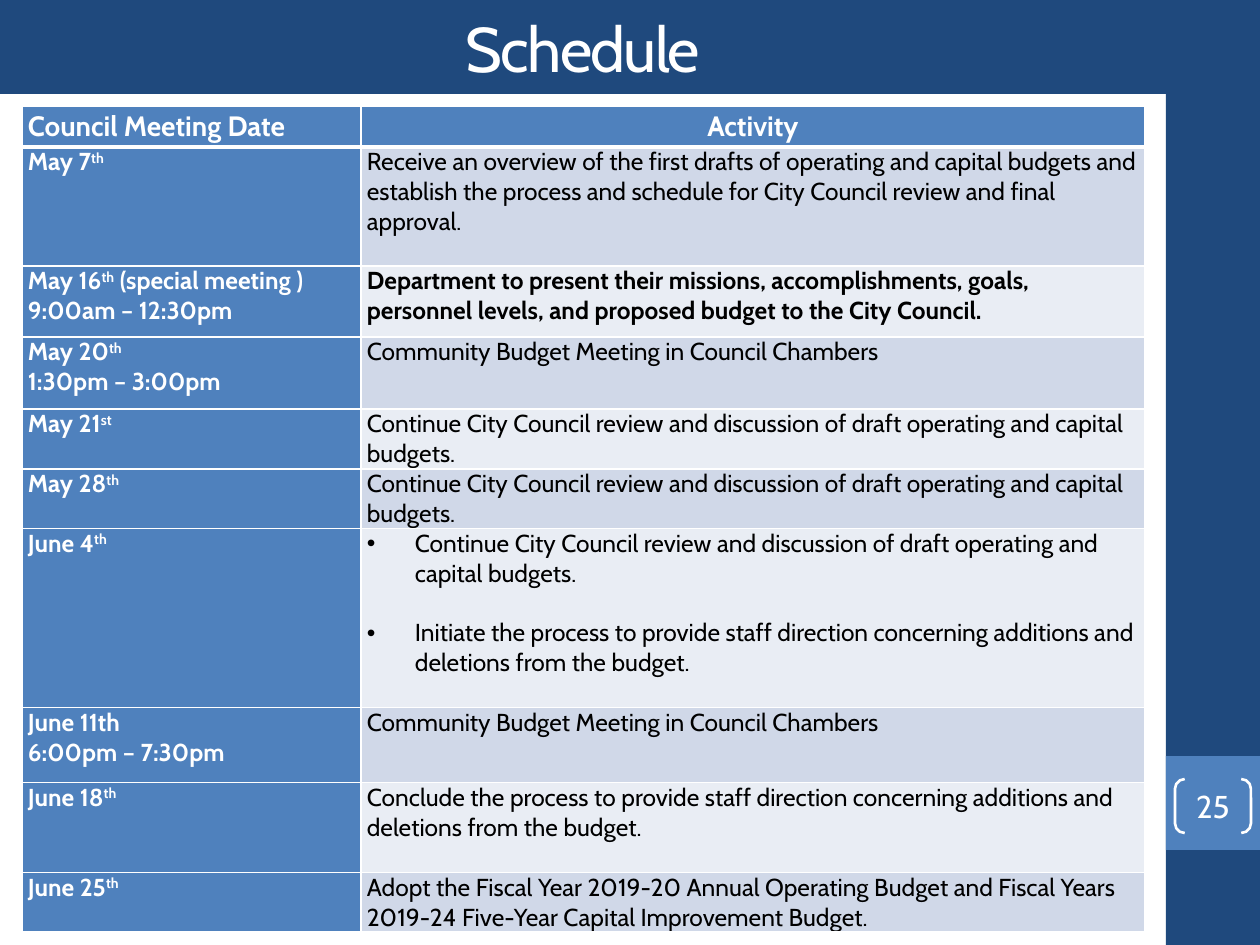
from dataclasses import dataclass

from lxml.etree import SubElement
from pptx import Presentation
from pptx.dml.color import RGBColor
from pptx.enum.shapes import MSO_SHAPE as Shape
from pptx.enum.text import MSO_ANCHOR as Anchor, PP_ALIGN as Align
from pptx.oxml.ns import qn
from pptx.util import Pt

EMU_PER_PX = 914400 / 126


def px(length):
    return round(length * EMU_PER_PX)


@dataclass(frozen=True)
class Theme:
    font: str = "Cabin"
    navy: str = "1F497D"
    blue: str = "4F81BD"
    bands: tuple = ("D0D8E8", "E9EDF4")
    white: str = "FFFFFF"
    black: str = "000000"
    title_size: int = 36
    number_size: int = 18
    header_size: int = 16
    body_size: int = 14


class SlideBuilder:
    def __init__(self, slide, theme):
        self.slide = slide
        self.theme = theme

    def style(self, paragraph, size, color, bold=False, align=Align.LEFT):
        paragraph.alignment = align
        font = paragraph.font
        font.name = self.theme.font
        font.size = Pt(size)
        font.bold = bold
        font.color.rgb = RGBColor.from_string(color)

    def fill(self, target, color):
        target.fill.solid()
        target.fill.fore_color.rgb = RGBColor.from_string(color)

    def title(self, text, *box):
        title = self.slide.shapes.title
        title.left, title.top, title.width, title.height = map(px, box)
        self.fill(title, self.theme.navy)
        title.text_frame.vertical_anchor = Anchor.MIDDLE
        heading = title.text_frame.paragraphs[0]
        run = heading.add_run()
        run.text = text
        run._r.get_or_add_rPr().set("spc", "-100")
        self.style(heading, self.theme.title_size, self.theme.white, align=Align.CENTER)

    def panel(self, color, *box):
        panel = self.slide.shapes.add_shape(Shape.RECTANGLE, *map(px, box))
        panel.shadow.inherit = False
        panel.line.fill.background()
        self.fill(panel, color)

    def page_number(self, number, *box):
        bracket = self.slide.shapes.add_shape(Shape.DOUBLE_BRACKET, *map(px, box))
        bracket.adjustments[0] = 0.18
        bracket.shadow.inherit = False
        bracket.fill.background()
        bracket.line.color.rgb = RGBColor.from_string(self.theme.white)
        bracket.line.width = Pt(1.5)
        frame = bracket.text_frame
        frame.margin_left = frame.margin_right = frame.margin_top = frame.margin_bottom = 0
        frame.vertical_anchor = Anchor.MIDDLE
        frame.text = str(number)
        self.style(frame.paragraphs[0], self.theme.number_size, self.theme.white,
                   align=Align.CENTER)

    def borders(self, cell, bottom=1):
        properties = cell._tc.get_or_add_tcPr()
        for side, width in (("L", 1), ("R", 1), ("T", 1), ("B", bottom)):
            line = SubElement(properties, qn(f"a:ln{side}"), w=str(Pt(width)))
            paint = SubElement(line, qn("a:solidFill"))
            SubElement(paint, qn("a:srgbClr"), val=self.theme.white)

    def bullet(self, paragraph):
        properties = paragraph._p.get_or_add_pPr()
        properties.set("marL", str(px(48)))
        properties.set("indent", str(-px(48)))
        paragraph.space_after = Pt(17)
        SubElement(properties, qn("a:buFont"), typeface="Arial")
        SubElement(properties, qn("a:buChar"), char="•")

    def cell(self, cell, lines, background, size, color, bold=False,
             align=Align.LEFT, anchor=Anchor.TOP, bottom=1):
        """Fill a cell; text between carets is superscript, several long lines are bullets."""
        cell.margin_left = cell.margin_right = px(6)
        cell.margin_top = cell.margin_bottom = 0
        cell.vertical_anchor = anchor
        self.borders(cell, bottom)
        self.fill(cell, background)
        frame = cell.text_frame
        for index, line in enumerate(lines):
            paragraph = frame.add_paragraph() if index else frame.paragraphs[0]
            if len(lines) > 1 and color == self.theme.black:
                self.bullet(paragraph)
            for part, text in enumerate(line.split("^")):
                if text:
                    run = paragraph.add_run()
                    run.text = text
                    if part % 2:
                        run._r.get_or_add_rPr().set("baseline", "30000")
            self.style(paragraph, size, color, bold, align)

    def schedule(self, left, top, widths, headings, header_height, meetings):
        theme = self.theme
        heights = [header_height] + [height for height, *_ in meetings]
        table = self.slide.shapes.add_table(
            len(heights), len(widths), px(left), px(top),
            px(sum(widths)), px(sum(heights))).table
        table.first_col = True
        for column, width in zip(table.columns, widths):
            column.width = px(width)
        for row, height in zip(table.rows, heights):
            row.height = px(height)
        for column, (heading, align) in enumerate(headings):
            self.cell(table.cell(0, column), [heading], theme.blue, theme.header_size,
                      theme.white, True, align, Anchor.MIDDLE, bottom=3)
        for index, (_, dates, activities, bold) in enumerate(meetings):
            row = index + 1
            self.cell(table.cell(row, 0), dates, theme.blue, theme.body_size,
                      theme.white, True)
            self.cell(table.cell(row, 1), activities, theme.bands[index % 2],
                      theme.body_size, theme.black, bold)


REVIEW = "Continue City Council review and discussion of draft operating and capital budgets."
DIRECTION = ("the process to provide staff direction concerning additions and "
             "deletions from the budget.")
COMMUNITY = "Community Budget Meeting in Council Chambers"

# Row height, date lines, activity lines, bold activity
MEETINGS = [
    (119, ["May 7^th"],
     ["Receive an overview of the first drafts of operating and capital budgets and "
      "establish the process and schedule for City Council review and final approval."], False),
    (71, ["May 16^th^ (special meeting )", "9:00am – 12:30pm"],
     ["Department to present their missions, accomplishments, goals, personnel levels, "
      "and proposed budget to the City Council."], True),
    (72, ["May 20^th", "1:30pm – 3:00pm"], [COMMUNITY], False),
    (60, ["May 21^st"], [REVIEW], False),
    (59, ["May 28^th"], [REVIEW], False),
    (179, ["June 4^th"], [REVIEW, f"Initiate {DIRECTION}"], False),
    (75, ["June 11th", "6:00pm – 7:30pm"], [COMMUNITY], False),
    (90, ["June 18^th"], [f"Conclude {DIRECTION}"], False),
    (59, ["June 25^th"],
     ["Adopt the Fiscal Year 2019-20 Annual Operating Budget and Fiscal Years "
      "2019-24 Five-Year Capital Improvement Budget."], False),
]


def main():
    deck = Presentation()
    deck.slide_width, deck.slide_height = px(1260), px(945)
    theme = Theme()
    builder = SlideBuilder(deck.slides.add_slide(deck.slide_layouts[5]), theme)
    builder.panel(theme.navy, 1166, 0, 94, 945)
    builder.panel(theme.blue, 1166, 756, 94, 94)
    builder.title("Schedule", 0, 0, 1166, 94)
    builder.schedule(
        22, 106, [339, 784],
        [("Council Meeting Date", Align.LEFT), ("Activity", Align.CENTER)], 41, MEETINGS)
    builder.page_number(25, 1175, 779, 76, 54)
    deck.save("out.pptx")


if __name__ == "__main__":
    main()
